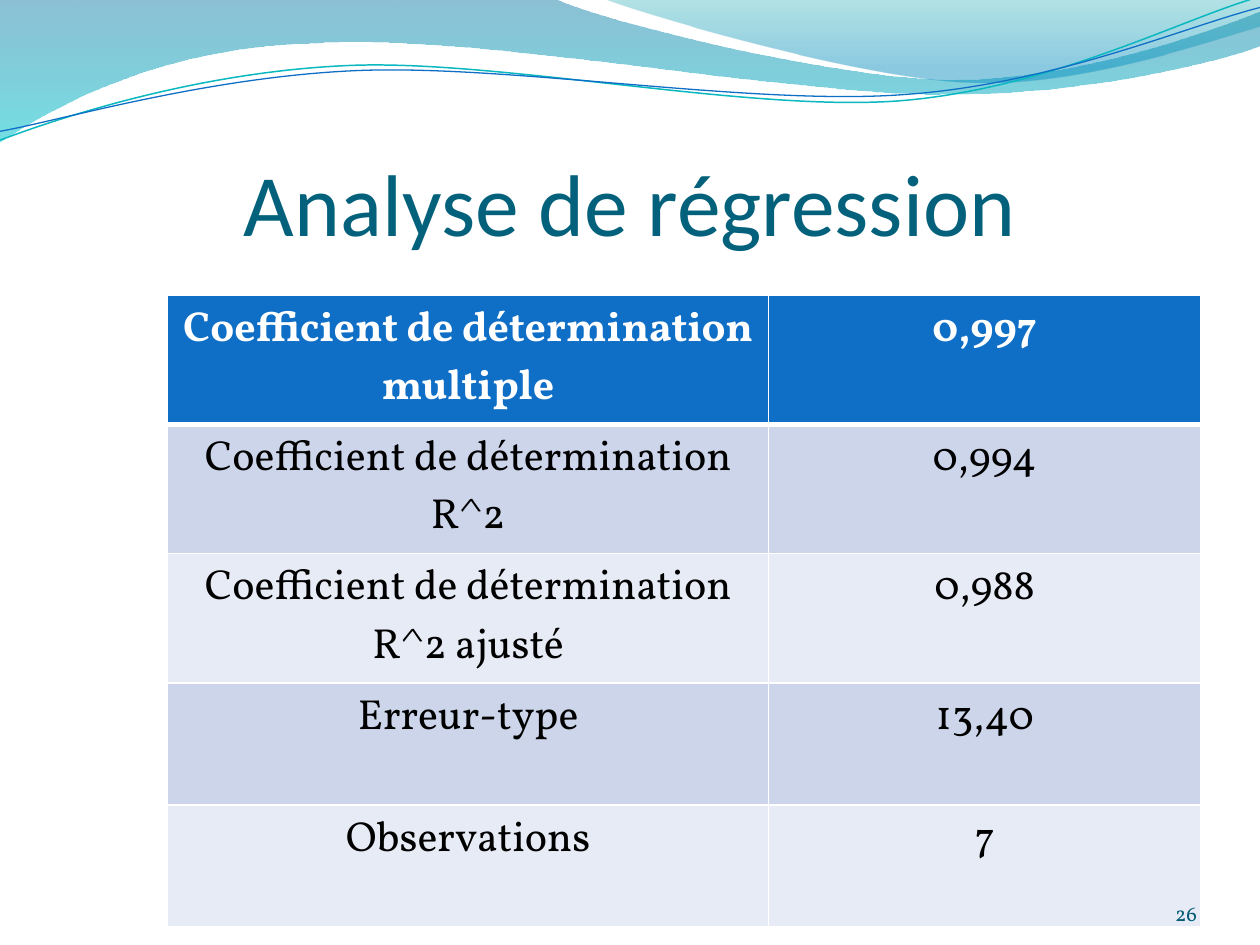
from lxml import etree
from pptx import Presentation
from pptx.dml.color import RGBColor
from pptx.enum import text
from pptx.oxml.ns import qn
from pptx.util import Pt

BODY_FONT = "Vollkorn"
HEADER, BAND_DARK, BAND_LIGHT = "0F6FC6", "CCD5EA", "E7EBF5"
LINE_ROTATION = 357.3

ROWS = [
    ("Coefficient de détermination multiple", "0,997"),
    ("Coefficient de détermination R^2", "0,994"),
    ("Coefficient de détermination R^2 ajusté", "0,988"),
    ("Erreur-type", "13,40"),
    ("Observations", "7"),
]

# Points of each outline: a pair is a straight segment, six numbers a Bézier curve.
WIDE_WAVE = [
    (0, 0), (317, -0.7), (343, 12, 478, 45.4, 546, 45.4),
    (614, 45.4, 690, 18.7, 720, 6.5), (720.7, 26),
    (708, 31.7, 626, 54.7, 537, 54), (448, 54, 275, 20.2, 185, 24.5),
    (93, 26, 33, 59.8, -0.7, 81.4), (0, 0),
]
RIGHT_WAVE = [
    (345, -0.7), (366.5, 8, 491, 44.6, 553.7, 46.8),
    (616.3, 49.7, 692, 23, 720, 15), (720, 0), (345, -0.7),
]
TEAL_LINE = [
    (-1.4, 63.1), (33.8, 51.7, 114.1, 29.4, 199.8, 29.9),
    (284.8, 30.3, 425.8, 67.2, 512.4, 64.9), (599.1, 62.3, 676.5, 25.7, 720.2, 15.5),
]
BLUE_LINE = [
    (-1.1, 58), (33, 53.7, 118.2, 32.6, 204.1, 33),
    (290.6, 33.4, 428.9, 63.8, 515.5, 61.4), (601.5, 59.6, 678.4, 30, 721.4, 21.3),
]


def rgb(value):
    return RGBColor.from_string(value)


def sub(parent, tag, **attrs):
    return etree.SubElement(parent, qn(tag), attrs)


def add_outline(s, segments, close):
    """Build straight segments between the end points, then bend the curved ones."""
    start, *rest = segments
    fb = s.shapes.build_freeform(Pt(start[0]), Pt(start[1]))
    fb.add_line_segments([(Pt(seg[-2]), Pt(seg[-1])) for seg in rest], close=close)
    sp = fb.convert_to_shape()
    sp.shadow.inherit = False
    for line_to, seg in zip(list(sp._element.iter(qn("a:lnTo"))), rest):
        if len(seg) == 6:
            curve = etree.Element(qn("a:cubicBezTo"))
            for x, y in zip(seg[::2], seg[1::2]):
                sub(curve, "a:pt", x=str(Pt(x) - sp.left), y=str(Pt(y) - sp.top))
            line_to.getparent().replace(line_to, curve)
    return sp


def add_wave(s, segments, stops):
    """Add a filled wave; stops are (position, colour, opacity in percent)."""
    sp = add_outline(s, segments, True)
    sp.line.fill.background()
    sp.fill.gradient()
    sp.fill.gradient_angle = 270
    for stop, (position, color, _) in zip(sp.fill.gradient_stops, stops):
        stop.position = position
        stop.color.rgb = rgb(color)
    for clr, (_, _, opacity) in zip(sp._element.spPr.iter(qn("a:srgbClr")), stops):
        sub(clr, "a:alpha", val=str(opacity * 1000))


def add_wave_line(s, segments, color, width):
    sp = add_outline(s, segments, False)
    sp.rotation = LINE_ROTATION
    sp.fill.background()
    sp.line.color.rgb = rgb(color)
    sp.line.width = Pt(width)


def write(tf, content, font, size, color, align, bold=False):
    p = tf.paragraphs[0]
    p.text = content
    p.alignment = align
    p.font.name, p.font.size, p.font.bold = font, Pt(size), bold
    p.font.color.rgb = rgb(color)


def set_insets(tf, top=0):
    tf.margin_left = tf.margin_right = tf.margin_bottom = 0
    tf.margin_top = Pt(top)
    tf.vertical_anchor = text.MSO_ANCHOR.BOTTOM
    tf.word_wrap = True


def set_title(s, content):
    title = s.shapes.title
    title.left, title.top, title.width, title.height = Pt(36), Pt(55.25), Pt(648), Pt(90)
    set_insets(title.text_frame, 3.6)
    write(title.text_frame, content, "Calibri", 50, "04617B", text.PP_ALIGN.CENTER)


def set_borders(cell, bottom):
    tc_pr = cell._tc.get_or_add_tcPr()
    for side, width in (("L", 1), ("R", 1), ("T", 1), ("B", bottom)):
        ln = sub(tc_pr, f"a:ln{side}", w=str(Pt(width)))
        sub(sub(ln, "a:solidFill"), "a:srgbClr", val="FFFFFF")


def add_results_table(s):
    frame = s.shapes.add_table(len(ROWS), 2, Pt(95.75), Pt(168.5), Pt(590.5), Pt(348.5))
    table = frame.table
    for column, width in zip(table.columns, (343.5, 247)):
        column.width = Pt(width)
    for i, row in enumerate(ROWS):
        is_header = i == 0
        fill = HEADER if is_header else BAND_DARK if i % 2 else BAND_LIGHT
        color = "FFFFFF" if is_header else "000000"
        for j, content in enumerate(row):
            cell = table.cell(i, j)
            set_borders(cell, 3 if is_header else 1)
            cell.fill.solid()
            cell.fill.fore_color.rgb = rgb(fill)
            write(cell.text_frame, content, BODY_FONT, 24, color,
                  text.PP_ALIGN.CENTER, is_header)


def add_slide_number(s, number):
    tf = s.shapes.add_textbox(Pt(624), Pt(500.5), Pt(60), Pt(28.75)).text_frame
    set_insets(tf)
    write(tf, number, BODY_FONT, 12, "045D75", text.PP_ALIGN.RIGHT)


def main():
    prs = Presentation()
    prs.slide_width, prs.slide_height = Pt(720), Pt(540)
    s = prs.slides.add_slide(prs.slide_layouts[5])
    add_wave(s, WIDE_WAVE, [(0, "0074A1", 45), (1, "00C6CF", 55)])
    add_wave(s, RIGHT_WAVE, [(0, "00A1A9", 30), (0.8, "008BBF", 45)])
    add_wave_line(s, TEAL_LINE, "0AB8BF", 0.85)
    add_wave_line(s, BLUE_LINE, "0F6FC6", 0.75)
    set_title(s, "Analyse de régression")
    add_results_table(s)
    add_slide_number(s, "26")
    prs.save("out.pptx")


if __name__ == "__main__":
    main()
